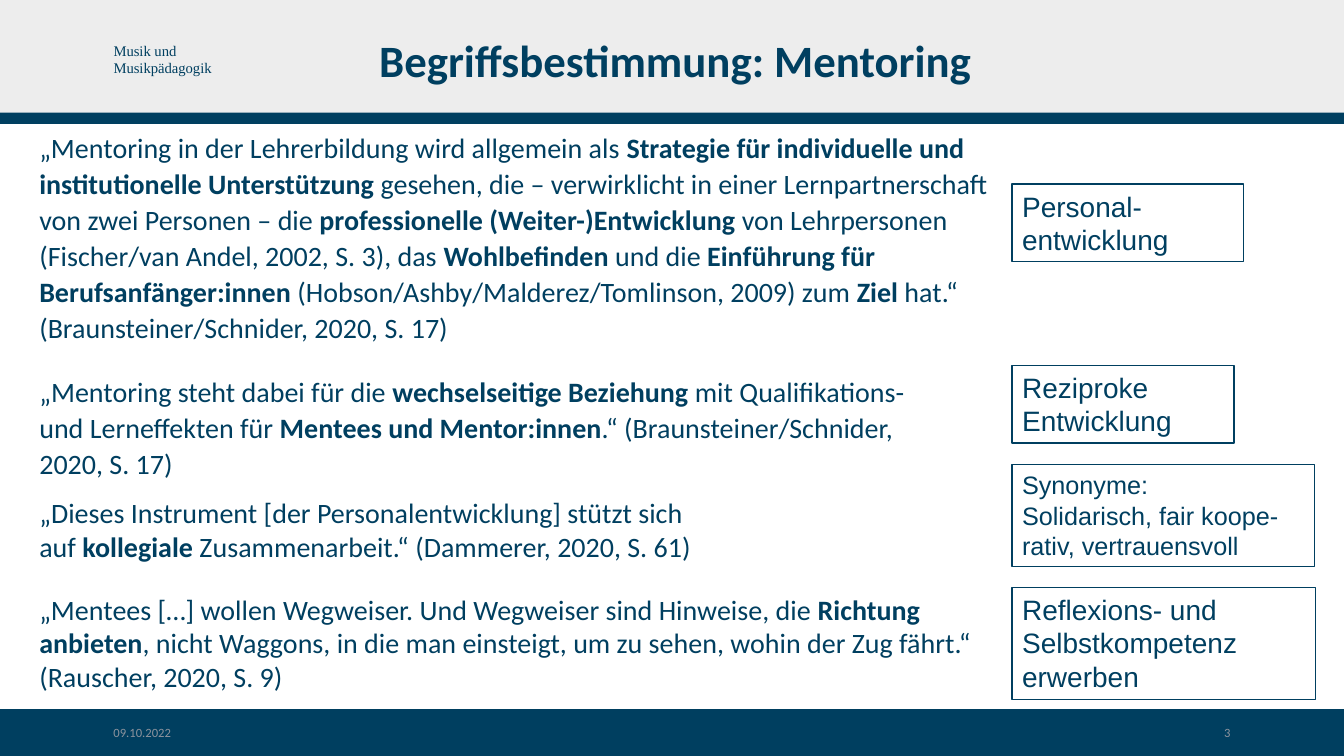
from pptx import Presentation
from pptx.dml.color import RGBColor
from pptx.enum.shapes import MSO_SHAPE
from pptx.enum.text import MSO_ANCHOR, MSO_AUTO_SIZE, PP_ALIGN
from pptx.util import Pt

RECTANGLE = MSO_SHAPE.RECTANGLE
MIDDLE, TOP = MSO_ANCHOR.MIDDLE, MSO_ANCHOR.TOP
LEFT, CENTER, RIGHT = PP_ALIGN.LEFT, PP_ALIGN.CENTER, PP_ALIGN.RIGHT
GROW, FIXED = MSO_AUTO_SIZE.SHAPE_TO_FIT_TEXT, MSO_AUTO_SIZE.NONE
NAVY, LIGHT_GREY, FOOTER_GREY = "003F60", "EDEDED", "8C939D"


def color(hex_string):
    return RGBColor.from_string(hex_string)


def write(shape, lines, size, font="Calibri", hex_string=NAVY, align=LEFT,
          anchor=TOP, auto_size=GROW):
    """Write one paragraph per line; text between | marks is bold, \\v breaks a line."""
    frame = shape.text_frame
    frame.word_wrap = True
    frame.auto_size = auto_size
    frame.vertical_anchor = anchor
    for index, line in enumerate(lines):
        paragraph = frame.add_paragraph() if index else frame.paragraphs[0]
        paragraph.alignment = align
        for part_index, part in enumerate(line.split("|")):
            for piece_index, piece in enumerate(part.split("\v")):
                if piece_index:
                    paragraph.add_line_break()
                if piece:
                    run = paragraph.add_run()
                    run.text = piece
                    run.font.name = font
                    run.font.size = Pt(size)
                    run.font.bold = part_index % 2 == 1
                    run.font.color.rgb = color(hex_string)
    return frame.paragraphs[0]


presentation = Presentation()
presentation.slide_width, presentation.slide_height = Pt(960), Pt(540)
slide = presentation.slides.add_slide(presentation.slide_layouts[5])
shapes = slide.shapes

# Header and footer bands
for top, height, fill in [(506.5, 33.5, NAVY), (0, 81, LIGHT_GREY), (80.5, 8, NAVY)]:
    band = shapes.add_shape(RECTANGLE, 0, Pt(top), Pt(960), Pt(height))
    band.shadow.inherit = False
    band.fill.solid()
    band.fill.fore_color.rgb = color(fill)
    band.line.fill.background()

department = shapes.add_textbox(Pt(74), Pt(26), Pt(146), Pt(32.5))
write(department, ["Musik und", "Musikpädagogik"], 10.5, "Times New Roman")

for left, text, align in [(74, "09.10.2022", LEFT), (670, "3", RIGHT)]:
    footer = shapes.add_textbox(Pt(left), Pt(515), Pt(216), Pt(17))
    write(footer, [text], 9, hex_string=FOOTER_GREY, align=align, anchor=MIDDLE,
          auto_size=FIXED)

# Title, brought in front of the header band
title = shapes.title
title.left, title.top, title.width, title.height = Pt(158.5), Pt(13.5), Pt(648), Pt(62.5)
heading = write(title, ["|Begriffsbestimmung: Mentoring|"], 32, align=CENTER,
                anchor=MIDDLE, auto_size=FIXED)
heading.line_spacing = 0.9
title.element.getparent().append(title.element)

# Quotations: top, width, height, line spacing, text
quotations = [
    (88, 703.5, 162, 1.07,
     "„Mentoring in der Lehrerbildung wird allgemein als |Strategie für individuelle und "
     "institutionelle Unterstützung| gesehen, die – verwirklicht in einer Lernpartnerschaft "
     "von zwei Personen – die |professionelle (Weiter-)Entwicklung |von Lehrpersonen "
     "(Fischer/van Andel, 2002, S. 3), das |Wohlbefinden |und die |Einführung für "
     "Berufsanfänger:innen |(Hobson/Ashby/Malderez/Tomlinson, 2009) zum |Ziel| hat.“ "
     "(Braunsteiner/Schnider, 2020, S. 17)"),
    (262.5, 638, 84, 1.07,
     "„Mentoring steht dabei für die |wechselseitige Beziehung| mit Qualifikations- und "
     "Lerneffekten für |Mentees und Mentor:innen|.“ (Braunsteiner/Schnider, 2020, S. 17)"),
    (350.5, 558, 55.5, 1,
     "„Dieses Instrument [der Personalentwicklung] stützt sich\vauf| kollegiale "
     "|Zusammenarbeit.“ (Dammerer, 2020, S. 61)"),
    (419.5, 703.5, 80, 1,
     "„Mentees […] wollen Wegweiser. Und Wegweiser sind Hinweise, die |Richtung anbieten|, "
     "nicht Waggons, in die man einsteigt, um zu sehen, wohin der Zug fährt.“ "
     "(Rauscher, 2020, S. 9)"),
]
for top, width, height, line_spacing, text in quotations:
    quotation = shapes.add_textbox(Pt(21), Pt(top), Pt(width), Pt(height))
    paragraph = write(quotation, [text], 20)
    paragraph.line_spacing = line_spacing
    if line_spacing > 1:
        paragraph.space_after = Pt(8)

# Framed key terms: top, width, height, size, lines
key_terms = [
    (131.5, 165.5, 55.5, 20, ["Personal-entwicklung"]),
    (261, 158.5, 55.5, 20, ["Reziproke Entwicklung"]),
    (332, 216, 72.5, 18, ["Synonyme:", "Solidarisch, fair koope-rativ, vertrauensvoll"]),
    (419.5, 216.5, 80, 20, ["Reflexions- und Selbstkompetenz erwerben"]),
]
for top, width, height, size, lines in key_terms:
    key_term = shapes.add_shape(RECTANGLE, Pt(723), Pt(top), Pt(width), Pt(height))
    key_term.shadow.inherit = False
    key_term.fill.background()
    key_term.line.color.rgb = color(NAVY)
    key_term.line.width = Pt(1)
    write(key_term, lines, size, "Arial")

presentation.save("out.pptx")
